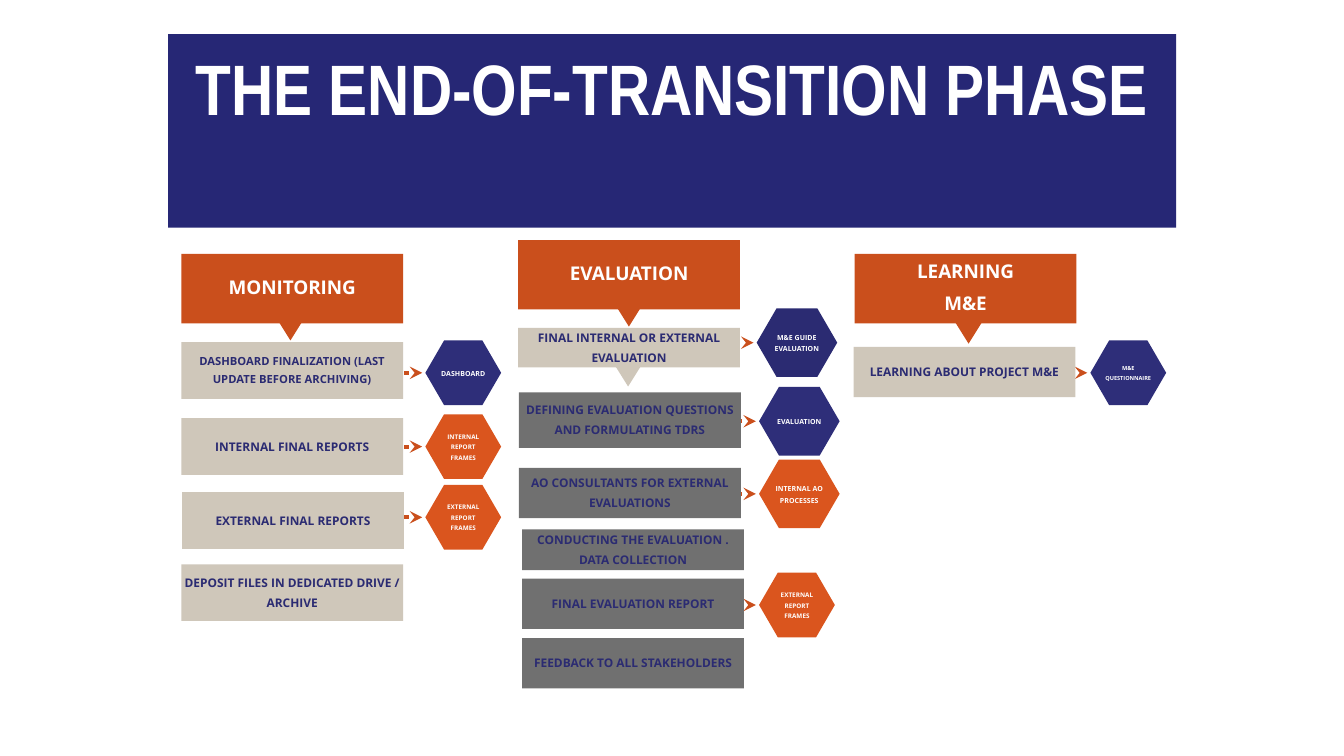
from lxml import etree
from pptx import Presentation
from pptx.dml.color import RGBColor
from pptx.enum.shapes import MSO_CONNECTOR, MSO_SHAPE
from pptx.enum.text import MSO_ANCHOR, PP_ALIGN
from pptx.oxml.ns import qn
from pptx.util import Cm, Pt

RECT, HEX, DOWN = MSO_SHAPE.RECTANGLE, MSO_SHAPE.HEXAGON, MSO_SHAPE.DOWN_ARROW
STRAIGHT = MSO_CONNECTOR.STRAIGHT
TOP, MIDDLE, CENTER = MSO_ANCHOR.TOP, MSO_ANCHOR.MIDDLE, PP_ALIGN.CENTER

# Content: all lengths in cm
TITLE = "THE END-OF-TRANSITION PHASE"
BANNER = (4.24, 0.86, 25.4, 4.88)

# left, top, text
HEADS = [
    (4.57, 6.4, "MONITORING"),
    (13.06, 6.05, "EVALUATION"),
    (21.54, 6.4, "LEARNING\nM&E"),
]

# left, top, height, fill
POINTERS = [
    (6.81, 6.5, 2.08, "orange"),
    (15.34, 6.15, 2.08, "orange"),
    (23.9, 6.58, 2.08, "orange"),
    (15.32, 8.58, 1.16, "sand"),
]

# left, top, height, fill, type size, text
CARDS = [
    (4.57, 8.62, 1.43, "sand", "small",
     "DASHBOARD FINALIZATION (LAST UPDATE BEFORE ARCHIVING)"),
    (4.57, 10.54, 1.43, "sand", "card", "INTERNAL FINAL REPORTS"),
    (4.59, 12.4, 1.43, "sand", "card", "EXTERNAL FINAL REPORTS"),
    (4.57, 14.22, 1.43, "sand", "card",
     "DEPOSIT FILES IN DEDICATED DRIVE / ARCHIVE"),
    (13.06, 8.26, 1, "sand", "card", "FINAL INTERNAL OR EXTERNAL EVALUATION"),
    (13.08, 9.89, 1.4, "gray", "card",
     "DEFINING EVALUATION QUESTIONS AND FORMULATING TDRS"),
    (13.08, 11.79, 1.27, "gray", "card",
     "AO CONSULTANTS FOR EXTERNAL EVALUATIONS"),
    (13.16, 13.34, 1.03, "gray", "card",
     "CONDUCTING THE EVALUATION . DATA COLLECTION"),
    (13.16, 14.58, 1.27, "gray", "card", "FINAL EVALUATION REPORT"),
    (13.16, 16.08, 1.27, "gray", "card", "FEEDBACK TO ALL STAKEHOLDERS"),
    (21.51, 8.74, 1.27, "sand", "card", "LEARNING ABOUT PROJECT M&E"),
]

# left, top, width, height, fill, type size, text
SMALL, LARGE = (1.91, 1.63), (2.03, 1.73)
TOOLS = [
    (10.72, 8.58, *SMALL, "blue", "tool", "DASHBOARD"),
    (10.72, 10.44, *SMALL, "rust", "frame", "INTERNAL REPORT FRAMES"),
    (10.72, 12.22, *SMALL, "rust", "frame", "EXTERNAL REPORT FRAMES"),
    (19.07, 7.77, *LARGE, "ink", "tool", "M&E GUIDE\nEVALUATION"),
    (19.13, 9.75, *LARGE, "blue", "tool", "EVALUATION"),
    (19.13, 11.58, *LARGE, "rust", "tool", "INTERNAL AO PROCESSES"),
    (19.13, 14.43, *SMALL, "rust", "frame", "EXTERNAL REPORT FRAMES"),
    (27.48, 8.58, *SMALL, "blue", "tiny", "M&E QUESTIONNAIRE"),
]

THEME = {
    "color": {"navy": "262775", "ink": "2B2B72", "blue": "2E2E79",
              "orange": "CA4F1C", "rust": "DA551E", "sand": "CFC7BA",
              "gray": "707070", "white": "FFFFFF"},
    "size": {"title": 51, "head": 13.5, "card": 8.5, "small": 8,
             "tool": 5, "frame": 4.5, "tiny": 4},
    "font": {"title": "Arial Narrow", "body": "Open Sans"},
}
WIDE, HEAD_H = 5.59, 1.75
POINT_W, LINK_LEN, LINK_GAP = 1.02, 2.57, 0.08

deck = Presentation()
deck.slide_width, deck.slide_height = Cm(33.87), Cm(19.05)
slide = deck.slides.add_slide(deck.slide_layouts[6])


def color(name):
    return RGBColor.from_string(THEME["color"][name])


def apply(item, form):
    for key, value in form.items():
        setattr(item, key, value)


def draw(kind, box, fill, adjust=()):
    shape = slide.shapes.add_shape(kind, *map(Cm, box))
    shape.shadow.inherit = False
    shape.fill.solid()
    shape.fill.fore_color.rgb = color(fill)
    shape.line.fill.background()
    for i, value in enumerate(adjust):
        shape.adjustments[i] = value
    return shape


def write(shape, text, size, ink, font="body", inset=0.08, anchor=MIDDLE,
          space=1.4):
    frame = shape.text_frame
    apply(frame, {"word_wrap": True, "vertical_anchor": anchor})
    apply(frame, {"margin_" + side: Cm(inset)
                  for side in ("left", "right", "top", "bottom")})
    frame.text = text
    for para in frame.paragraphs:
        apply(para, {"alignment": CENTER, "line_spacing": space})
        for run in para.runs:
            apply(run.font, {"size": Pt(THEME["size"][size]), "bold": True,
                             "name": THEME["font"][font]})
            run.font.color.rgb = color(ink)


def label(box, rise, text, size, ink):
    """Text box that reaches above its shape by the given rise."""
    left, top, wide, high = box
    area = slide.shapes.add_textbox(
        *map(Cm, (left, top - rise, wide, high + rise)))
    write(area, text, size, ink)


def link(end, mid):
    line = slide.shapes.add_connector(
        STRAIGHT, Cm(end - LINK_LEN), Cm(mid), Cm(end), Cm(mid))
    line.line.color.rgb = color("orange")
    line.line.width = Pt(3)
    edge = line.line._get_or_add_ln()
    etree.SubElement(edge, qn("a:prstDash"), val="dot")
    etree.SubElement(edge, qn("a:tailEnd"), type="stealth")
    etree.SubElement(line._element.spPr, qn("a:effectLst"))


# Pointers and links lie behind the cards
for left, top, high, fill in POINTERS:
    draw(DOWN, (left, top, POINT_W, high), fill, (0.2, 0.8))
for left, top, wide, high, *rest in TOOLS:
    link(left - LINK_GAP, top + high / 2)

# Column heads
for left, top, text in HEADS:
    box = (left, top, WIDE, HEAD_H)
    draw(RECT, box, "orange")
    label(box, 0.3, text, "head", "white")

# Step cards
for left, top, high, fill, size, text in CARDS:
    box = (left, top, WIDE, high)
    draw(RECT, box, fill)
    label(box, 0.15, text, size, "ink")

# Tool hexagons
for left, top, wide, high, fill, size, text in TOOLS:
    draw(HEX, (left, top, wide, high), fill, (0.29,))
    label((left + 0.14 * wide, top, 0.72 * wide, high), 0.05,
          text, size, "white")

# Title banner
write(draw(RECT, BANNER, "navy"), TITLE, "title", "white", "title",
      0.25, TOP, 1.0)

deck.save("out.pptx")
